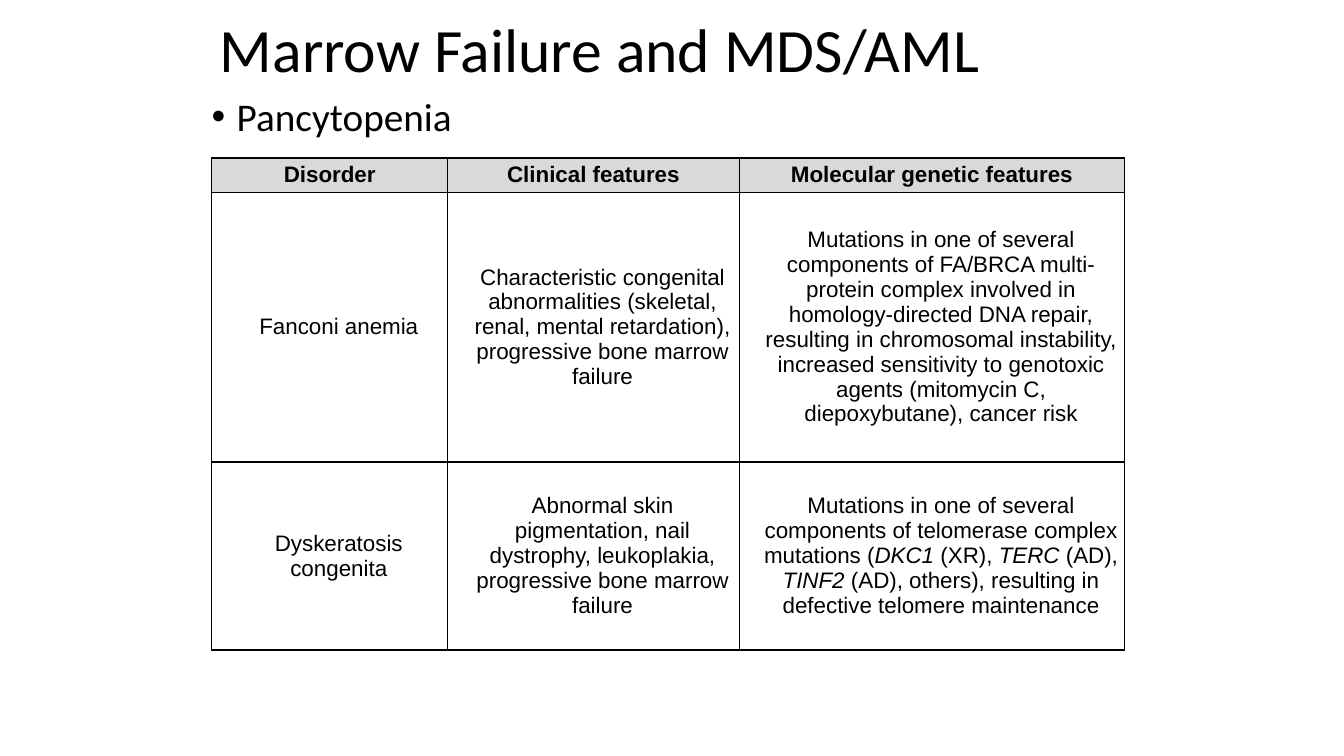
from lxml.etree import SubElement
from pptx import Presentation
from pptx.dml.color import RGBColor
from pptx.enum.text import MSO_ANCHOR as Anchor, PP_ALIGN as Align
from pptx.oxml.ns import qn
from pptx.util import Inches, Pt

BLACK = RGBColor(0, 0, 0)
HEADER_GREY = RGBColor(0xD9, 0xD9, 0xD9)

SLIDE_WIDTH, SLIDE_HEIGHT = Inches(13.33), Inches(7.5)
GRID_COLUMN, GRID_ROW = SLIDE_WIDTH / 160, SLIDE_HEIGHT / 90

TITLE_BOX = (25, 1, 109.7, 10.6)
BODY_BOX = (24, 11, 112, 60.4)
TABLE_BOX = (25.2, 18.8, 108.7, 58.6)
COLUMN_WIDTHS = (28.1, 34.7, 45.9)
ROW_HEIGHTS = (4.1, 32.1, 22.4)
CELL_INDENT = Inches(0.18)
BULLET_INDENT = Inches(0.25)

ITALIC_MARK = "*"
DISORDERS = [
    ("Disorder", "Clinical features", "Molecular genetic features"),
    (
        "Fanconi anemia",
        "Characteristic congenital abnormalities (skeletal, renal, mental "
        "retardation), progressive bone marrow failure",
        "Mutations in one of several components of FA/BRCA multi-protein complex "
        "involved in homology-directed DNA repair, resulting in chromosomal "
        "instability, increased sensitivity to genotoxic agents (mitomycin C, "
        "diepoxybutane), cancer risk",
    ),
    (
        "Dyskeratosis congenita",
        "Abnormal skin pigmentation, nail dystrophy, leukoplakia, progressive "
        "bone marrow failure",
        "Mutations in one of several components of telomerase complex mutations "
        "(*DKC1* (XR), *TERC* (AD), *TINF2* (AD), others), resulting in defective "
        "telomere maintenance",
    ),
]


def columns(count):
    return round(count * GRID_COLUMN)


def rows(count):
    return round(count * GRID_ROW)


def place(box):
    left, top, width, height = box
    return columns(left), rows(top), columns(width), rows(height)


def assign(target, values):
    for name, value in values.items():
        setattr(target, name, value)


def style_font(font, name, size, **values):
    font.color.rgb = BLACK
    assign(font, {"name": name, "size": Pt(size), **values})


def add_text(page, box, text, size, anchor, bullet=False):
    frame = page.shapes.add_textbox(*place(box)).text_frame
    assign(frame, {"word_wrap": True, "vertical_anchor": anchor})
    para = frame.paragraphs[0]
    para.line_spacing = 0.9
    if bullet:
        properties = para._p.get_or_add_pPr()
        properties.set("marL", str(BULLET_INDENT))
        properties.set("indent", str(-BULLET_INDENT))
        SubElement(properties, qn("a:buFont"), typeface="Arial")
        SubElement(properties, qn("a:buChar"), char="•")
    span = para.add_run()
    span.text = text
    style_font(span.font, "Calibri", size)


def add_borders(cell):
    properties = cell._tc.get_or_add_tcPr()
    for position, side in enumerate(("a:lnL", "a:lnR", "a:lnT", "a:lnB")):
        line = SubElement(properties, qn(side), w=str(Pt(1)))
        fill = SubElement(line, qn("a:solidFill"))
        SubElement(fill, qn("a:srgbClr"), val=str(BLACK))
        properties.insert(position, line)


def fill_cell(cell, text, header):
    margins = ("margin_left", "margin_right", "margin_top", "margin_bottom")
    assign(cell, {"vertical_anchor": Anchor.MIDDLE, **dict.fromkeys(margins, 0)})
    add_borders(cell)
    if header:
        cell.fill.solid()
        cell.fill.fore_color.rgb = HEADER_GREY
    else:
        cell.fill.background()
    para = cell.text_frame.paragraphs[0]
    para.alignment = Align.CENTER
    para._p.get_or_add_pPr().set("marL", str(0 if header else CELL_INDENT))
    for index, part in enumerate(text.split(ITALIC_MARK)):
        span = para.add_run()
        span.text = part
        style_font(span.font, "Arial", 16, bold=header, italic=index % 2 == 1)


def add_disorder_table(page, box):
    frame = page.shapes.add_table(len(ROW_HEIGHTS), len(COLUMN_WIDTHS), *place(box))
    table = frame.table
    assign(table, {"first_row": False, "horz_banding": False})
    for column, width in zip(table.columns, COLUMN_WIDTHS):
        column.width = columns(width)
    for row_index, (row, height) in enumerate(zip(table.rows, ROW_HEIGHTS)):
        row.height = rows(height)
        for cell, text in zip(row.cells, DISORDERS[row_index]):
            fill_cell(cell, text, header=row_index == 0)


def main():
    deck = Presentation()
    assign(deck, {"slide_width": SLIDE_WIDTH, "slide_height": SLIDE_HEIGHT})
    page = deck.slides.add_slide(deck.slide_layouts[6])
    add_text(page, TITLE_BOX, "Marrow Failure and MDS/AML", 44, Anchor.MIDDLE)
    add_disorder_table(page, TABLE_BOX)
    add_text(page, BODY_BOX, "Pancytopenia", 28, Anchor.TOP, bullet=True)
    deck.save("out.pptx")


if __name__ == "__main__":
    main()
